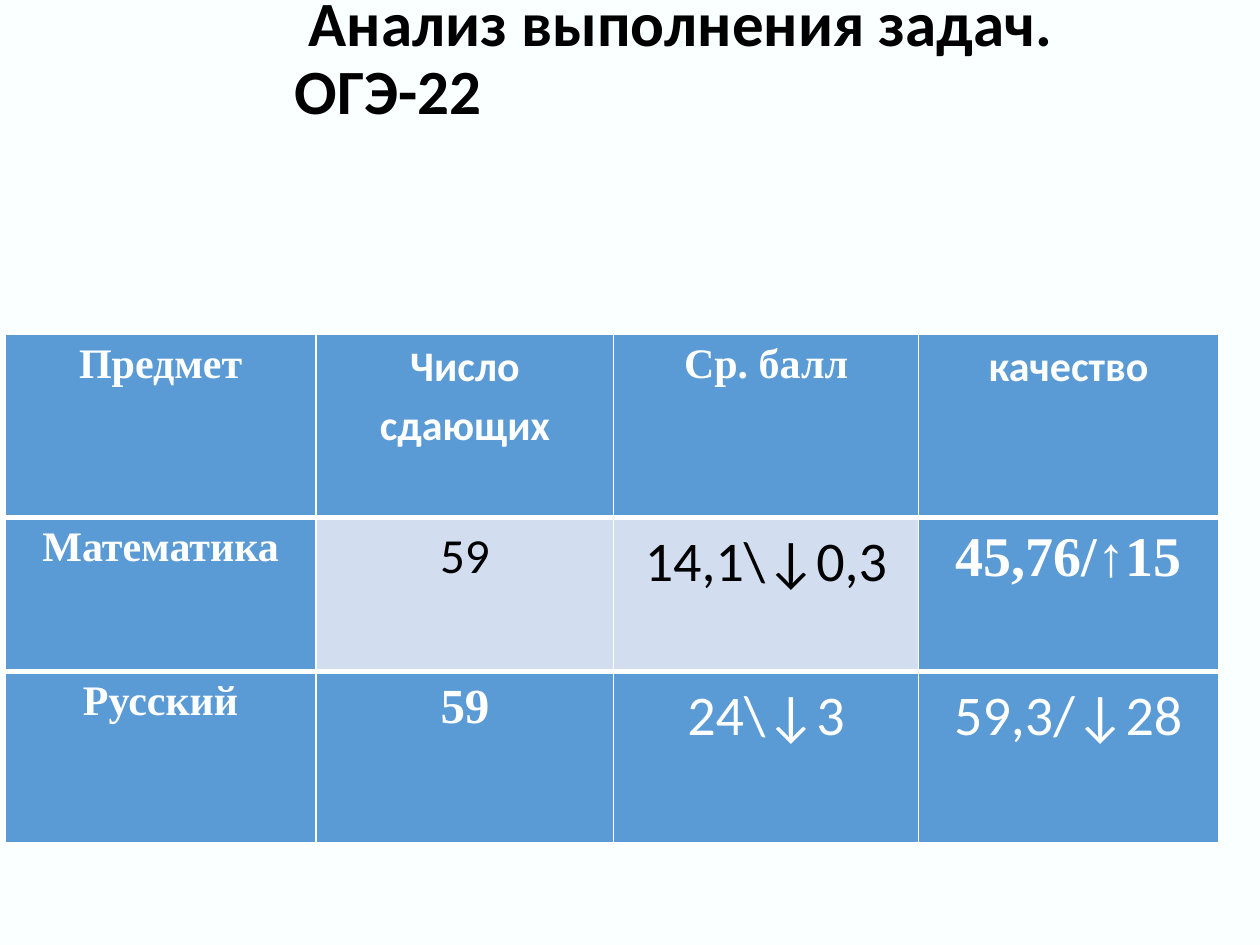
from lxml import etree
from pptx import Presentation
from pptx.dml.color import RGBColor
from pptx.enum import text
from pptx.oxml import ns
from pptx.util import Pt

BODY, SERIF = "Calibri", "Times New Roman"
WHITE, BLACK, BLUE, PALE = "FFFFFF", "000000", "5B9BD5", "D2DEEF"
COLUMN_WIDTHS = [177.8, 170, 174.2, 171.4]
ROW_HEIGHTS = [105, 88, 98]
THIN, THICK = 1, 3

# Each cell: wording, size, font, bold, text colour, fill
ROWS = [
    [("Предмет", 24, SERIF, True, WHITE, BLUE),
     ("Число сдающих", 24, BODY, True, WHITE, BLUE),
     ("Ср. балл", 24, SERIF, True, WHITE, BLUE),
     ("качество", 24, BODY, True, WHITE, BLUE)],
    [("Математика", 24, SERIF, True, WHITE, BLUE),
     ("59", 28, BODY, False, BLACK, PALE),
     ("14,1\\↓0,3", 32, BODY, False, BLACK, PALE),
     ("45,76/↑15", 32, SERIF, True, WHITE, BLUE)],
    [("Русский", 24, SERIF, True, WHITE, BLUE),
     ("59", 28, SERIF, True, WHITE, BLUE),
     ("24\\↓3", 32, BODY, False, WHITE, BLUE),
     ("59,3/↓28", 32, BODY, False, WHITE, BLUE)],
]


def paint(fill, color):
    fill.solid()
    fill.fore_color.rgb = RGBColor.from_string(color)


def add_span(para, wording, size, font, bold, color):
    span = para.add_run()
    span.text = wording
    span.font.size = Pt(size)
    span.font.name = font
    span.font.bold = bold
    span.font.color.rgb = RGBColor.from_string(color)


def set_borders(cell, top, bottom):
    """Draw white cell edges; the side edges are always thin."""
    properties = cell._tc.get_or_add_tcPr()
    edges = [("lnL", THIN), ("lnR", THIN), ("lnT", top), ("lnB", bottom)]
    for place, (tag, width) in enumerate(edges):
        line = etree.Element(ns.qn(f"a:{tag}"), w=str(Pt(width)))
        fill = etree.SubElement(line, ns.qn("a:solidFill"))
        etree.SubElement(fill, ns.qn("a:srgbClr"), val=WHITE)
        properties.insert(place, line)


def add_title(page, left, top, width, height):
    box = page.shapes.add_textbox(Pt(left), Pt(top), Pt(width), Pt(height))
    frame = box.text_frame
    frame.word_wrap = True
    frame.vertical_anchor = text.MSO_ANCHOR.MIDDLE
    para = frame.paragraphs[0]
    para.line_spacing = 0.9
    para._p.get_or_add_pPr().set("indent", str(Pt(8)))
    add_span(para, "Анализ выполнения задач. ОГЭ-22", 36, BODY, True, BLACK)


def fill_cell(cell, wording, size, font, bold, color, fill):
    paint(cell.fill, fill)
    cell.margin_left = cell.margin_right = Pt(5)
    cell.margin_top = cell.margin_bottom = Pt(0)
    para = cell.text_frame.paragraphs[0]
    para.alignment = text.PP_ALIGN.CENTER
    para.line_spacing = 1.15
    add_span(para, wording, size, font, bold, color)


def add_results(page, left, top):
    table = page.shapes.add_table(
        len(ROWS), len(COLUMN_WIDTHS), Pt(left), Pt(top),
        Pt(sum(COLUMN_WIDTHS)), Pt(sum(ROW_HEIGHTS))).table
    for column, width in zip(table.columns, COLUMN_WIDTHS):
        column.width = Pt(width)
    last = len(ROWS) - 1
    for r, (height, entries) in enumerate(zip(ROW_HEIGHTS, ROWS)):
        table.rows[r].height = Pt(height)
        for c, entry in enumerate(entries):
            cell = table.cell(r, c)
            fill_cell(cell, *entry)
            set_borders(cell, THICK if r else THIN, THICK if r < last else THIN)


def main():
    deck = Presentation()
    deck.slide_width, deck.slide_height = Pt(720), Pt(540)
    page = deck.slides.add_slide(deck.slide_layouts[6])
    paint(page.background.fill, "FAFFFF")
    add_title(page, 161.3, -0.7, 559.4, 69.8)
    add_results(page, 2.9, 190.8)
    deck.save("out.pptx")


if __name__ == "__main__":
    main()
